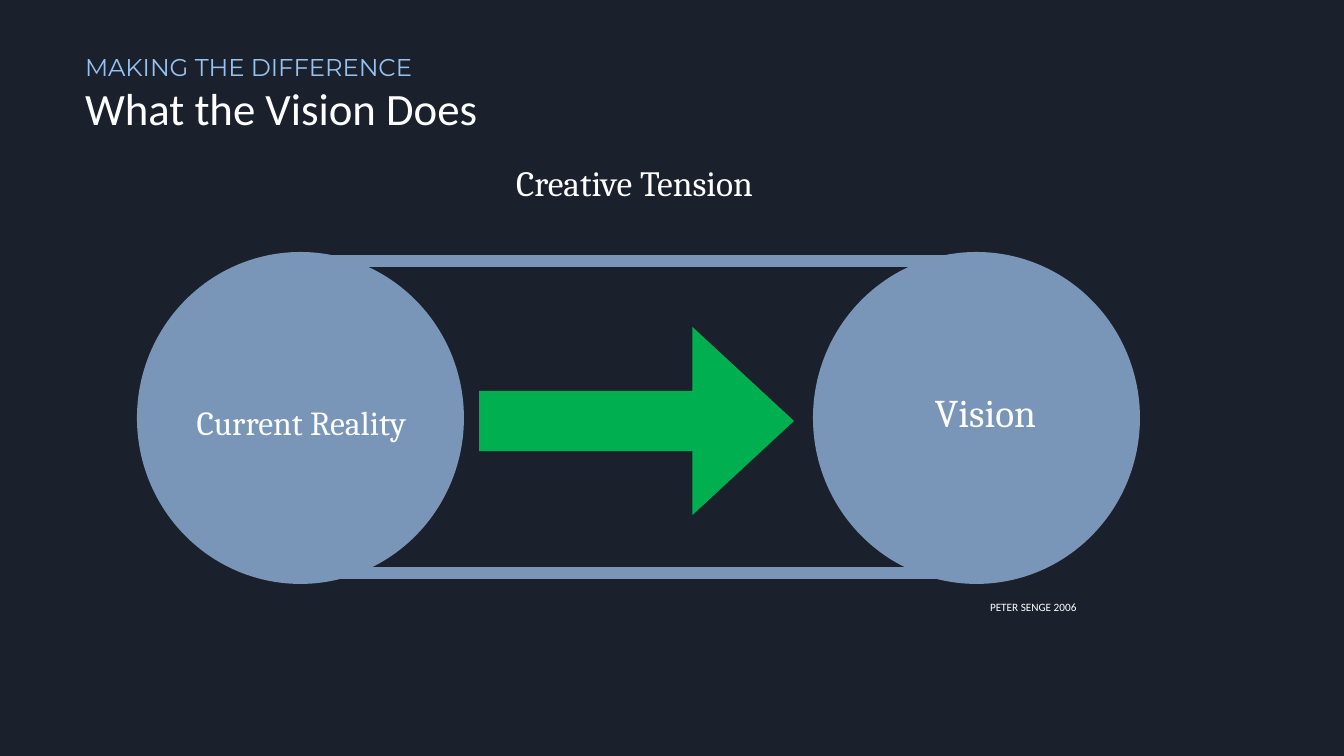
import pptx
import pptx.util
import pptx.dml.color
import pptx.enum.shapes
import pptx.enum.text
import pptx.oxml.ns
import lxml.etree

EMU_PER_PX = 914400 / 134.4
COLORS = {
    "background": "1B212C",
    "kicker": "96C2F0",
    "circle": "7996B9",
    "arrow": "00B050",
    "text": "FFFFFF",
}
SHAPES = pptx.enum.shapes.MSO_SHAPE
ALIGN = pptx.enum.text.PP_ALIGN
ANCHOR = pptx.enum.text.MSO_ANCHOR


def px(*lengths):
    return [pptx.util.Emu(round(length * EMU_PER_PX)) for length in lengths]


def color(name):
    return pptx.dml.color.RGBColor.from_string(COLORS[name])


def write_text(shape, text, font_name, size, color_name="text",
               align=ALIGN.LEFT, anchor=ANCHOR.TOP, inset=4):
    frame = shape.text_frame
    frame.word_wrap = True
    frame.auto_size = pptx.enum.text.MSO_AUTO_SIZE.NONE
    frame.vertical_anchor = anchor
    frame.margin_left, frame.margin_top, frame.margin_right, frame.margin_bottom = px(*[inset] * 4)
    paragraph = frame.paragraphs[0]
    paragraph.text = text
    paragraph.alignment = align
    paragraph.font.name = font_name
    paragraph.font.size = pptx.util.Pt(size)
    paragraph.font.color.rgb = color(color_name)
    return paragraph


def add_text(slide, box, text, font_name, size, **options):
    shape = slide.shapes.add_textbox(*px(*box))
    return write_text(shape, text, font_name, size, **options)


def add_title(slide, box, text):
    title = slide.shapes.title
    title.left, title.top, title.width, title.height = px(*box)
    write_text(title, text, "Montserrat", 13, color_name="kicker")


def add_filled_shape(slide, kind, box, color_name):
    shape = slide.shapes.add_shape(kind, *px(*box))
    shape.shadow.inherit = False
    shape.fill.solid()
    shape.fill.fore_color.rgb = color(color_name)
    shape.line.fill.background()
    return shape


def add_band(slide, left, right, y):
    connector = slide.shapes.add_connector(
        pptx.enum.shapes.MSO_CONNECTOR.STRAIGHT, *px(left, y, right, y))
    connector.line.color.rgb = color("circle")
    connector.line.width = pptx.util.Pt(6)
    properties = connector._element.spPr
    lxml.etree.SubElement(properties, pptx.oxml.ns.qn("a:effectLst"))


def main():
    presentation = pptx.Presentation()
    presentation.slide_width, presentation.slide_height = px(1344, 756)
    slide = presentation.slides.add_slide(presentation.slide_layouts[5])
    slide.background.fill.solid()
    slide.background.fill.fore_color.rgb = color("background")

    add_title(slide, (81, 48, 1207, 63), "MAKING THE DIFFERENCE")
    add_text(slide, (81, 77, 1207, 63), "What the Vision Does", "Calibri", 24)

    for left in (137, 813):
        add_filled_shape(slide, SHAPES.OVAL, (left, 252, 327, 332), "circle")
    add_band(slide, 306, 972, 261)
    add_band(slide, 271, 986, 573)

    arrow = add_filled_shape(slide, SHAPES.RIGHT_ARROW, (479, 327, 315, 188), "arrow")
    arrow.adjustments[0] = 0.32
    arrow.adjustments[1] = 0.54

    centered = {"align": ALIGN.CENTER, "anchor": ANCHOR.MIDDLE}
    add_text(slide, (155, 323, 293, 198), "Current Reality", "Cambria", 18, **centered)
    add_text(slide, (851, 358, 269, 108), "Vision", "Cambria", 21, **centered)
    add_text(slide, (418, 148, 441, 70), "Creative Tension ", "Cambria", 19,
             align=ALIGN.CENTER, inset=13)
    credit = add_text(slide, (986, 599, 210, 28), "PETER SENGE 2006", "Calibri", 6)
    credit.line_spacing = 0.8

    presentation.save("out.pptx")


if __name__ == "__main__":
    main()
